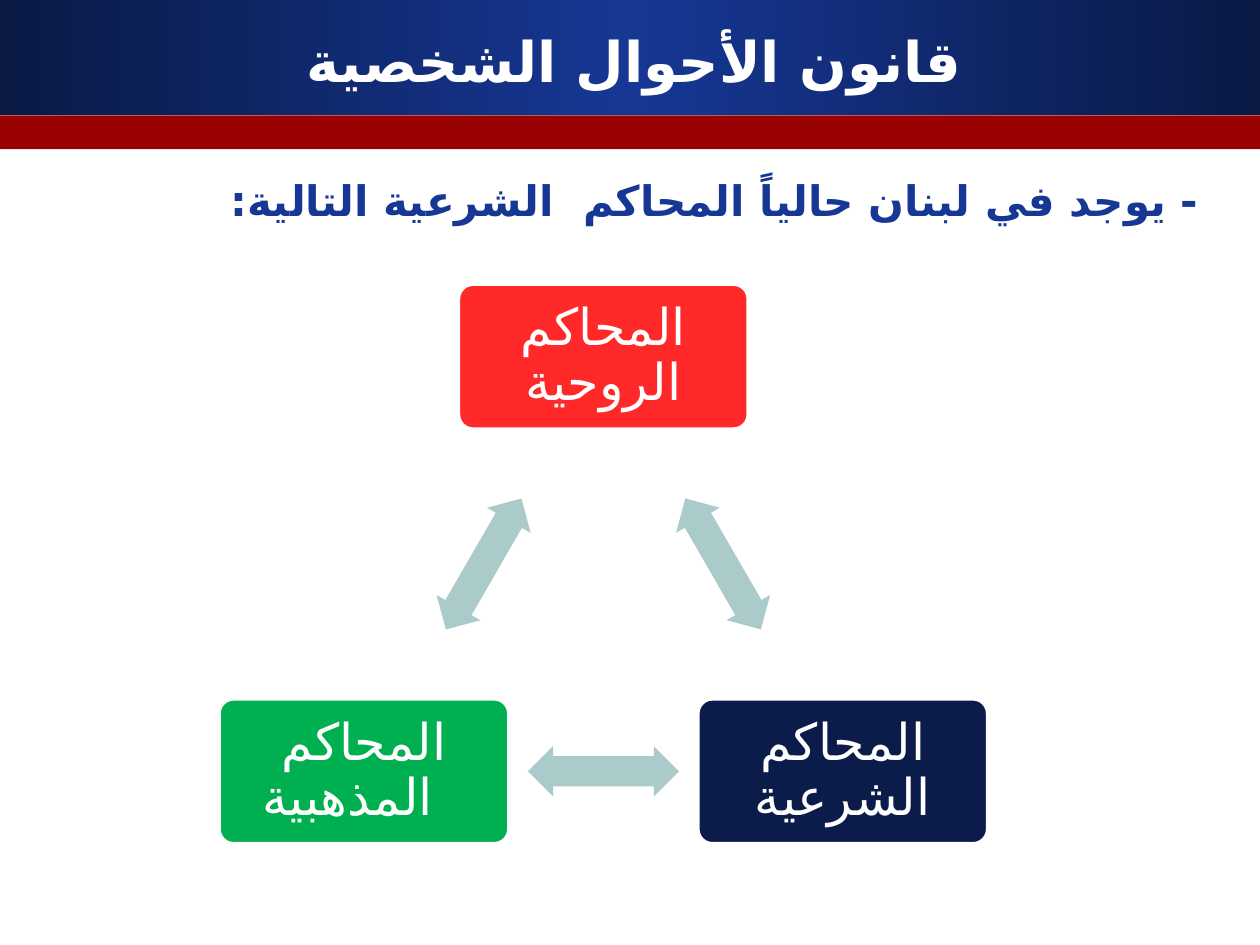
from copy import deepcopy
from math import sqrt

from pptx import Presentation
from pptx.dml.color import RGBColor
from pptx.enum.shapes import MSO_SHAPE as SHAPE
from pptx.enum.text import MSO_ANCHOR as ANCHOR, MSO_AUTO_SIZE as AUTO, PP_ALIGN as ALIGN
from pptx.oxml.ns import qn
from pptx.oxml.xmlchemy import OxmlElement
from pptx.util import Pt

WHITE = RGBColor(0xFF, 0xFF, 0xFF)
EDGE_BLUE = RGBColor(0x0A, 0x1A, 0x45)
BLUE = RGBColor(0x16, 0x37, 0x94)
DARK_RED = RGBColor(0x99, 0x00, 0x00)
RED = RGBColor(0xFF, 0x29, 0x29)
NAVY = RGBColor(0x0B, 0x1B, 0x4A)
GREEN = RGBColor(0x00, 0xB0, 0x50)
ARROW_GREY = RGBColor(0xAB, 0xCA, 0xCA)
ARABIC_FONT = "DejaVu Sans"

prs = Presentation()
prs.slide_width, prs.slide_height = Pt(720), Pt(540)
slide = prs.slides.add_slide(prs.slide_layouts[5])
shapes = slide.shapes


def add_block(kind, x, y, w, h, color):
    sp = shapes.add_shape(kind, Pt(x), Pt(y), Pt(w), Pt(h))
    sp.shadow.inherit = False
    sp.fill.solid()
    sp.fill.fore_color.rgb = color
    sp.line.fill.background()
    return sp


def write(tf, text, size, color, align, font="Arial", bold=False, rtl=False):
    tf.text = text
    tf.word_wrap = True
    tf.auto_size = AUTO.NONE
    p = tf.paragraphs[0]
    p.alignment = align
    if rtl:
        p._p.get_or_add_pPr().set("rtl", "1")
    p.font.size, p.font.bold = Pt(size), bold
    p.font.color.rgb = color
    p.font.name = font
    # Arabic letters take the complex-script font of the run
    r = p.runs[0]
    r.font.name = font
    cs = OxmlElement("a:cs")
    cs.set("typeface", ARABIC_FONT)
    r.font._element.append(cs)
    return p


# Header bands
band = add_block(SHAPE.RECTANGLE, 0, 0, 720, 65.5, BLUE)
band.fill.gradient()
band.fill.gradient_angle = 0
stop_list = band._element.spPr.find(".//" + qn("a:gsLst"))
stop_list.append(deepcopy(stop_list[0]))
for stop, position, color in zip(band.fill.gradient_stops, (0, 0.5, 1),
                                 (EDGE_BLUE, BLUE, EDGE_BLUE)):
    stop.position = position
    stop.color.rgb = color
add_block(SHAPE.RECTANGLE, 0, 66, 720, 19.2, DARK_RED)

# Title, brought in front of the bands
title = shapes.title
title.left, title.top, title.width, title.height = Pt(24), Pt(12), Pt(666), Pt(45)
title.text_frame.vertical_anchor = ANCHOR.MIDDLE
write(title.text_frame, "قانون الأحوال الشخصية ", 32, WHITE, ALIGN.CENTER,
      font=ARABIC_FONT, bold=True, rtl=True)
shapes._spTree.append(title._element)

# Introductory line
intro = shapes.add_textbox(Pt(28), Pt(96), Pt(664), Pt(240))
write(intro.text_frame, "- يوجد في لبنان حالياً المحاكم  الشرعية التالية:", 24, BLUE,
      ALIGN.RIGHT, bold=True, rtl=True)

# Cycle of courts: cards on the corners of an equilateral triangle
CARD_W, CARD_H = 165.6, 82.8
ARROW_W, ARROW_H = 86.4, 28.8
CENTER_X, TOP_Y, HALF_SIDE = 344.8, 203.8, 136.8
BASE_Y = TOP_Y + HALF_SIDE * sqrt(3)
courts = [
    ("المحاكم الروحية", RED, CENTER_X, TOP_Y),
    ("المحاكم الشرعية", NAVY, CENTER_X + HALF_SIDE, BASE_Y),
    ("المحاكم المذهبية  ", GREEN, CENTER_X - HALF_SIDE, BASE_Y),
]
for i, (text, color, x, y) in enumerate(courts):
    card = add_block(SHAPE.ROUNDED_RECTANGLE, x - CARD_W / 2, y - CARD_H / 2,
                     CARD_W, CARD_H, color)
    card.adjustments[0] = 0.1
    card.line.color.rgb = WHITE
    card.line.width = Pt(2)
    tf = card.text_frame
    tf.margin_left = tf.margin_right = tf.margin_top = tf.margin_bottom = Pt(11)
    tf.vertical_anchor = ANCHOR.MIDDLE
    write(tf, text, 29, WHITE, ALIGN.CENTER).line_spacing = 0.9

    # Double arrow halfway to the next card
    next_x, next_y = courts[(i + 1) % 3][2:]
    arrow = add_block(SHAPE.LEFT_RIGHT_ARROW, (x + next_x - ARROW_W) / 2,
                      (y + next_y - ARROW_H) / 2, ARROW_W, ARROW_H, ARROW_GREY)
    arrow.adjustments[0], arrow.adjustments[1] = 0.6, 0.5
    arrow.rotation = 60 + 120 * i

prs.save("out.pptx")
